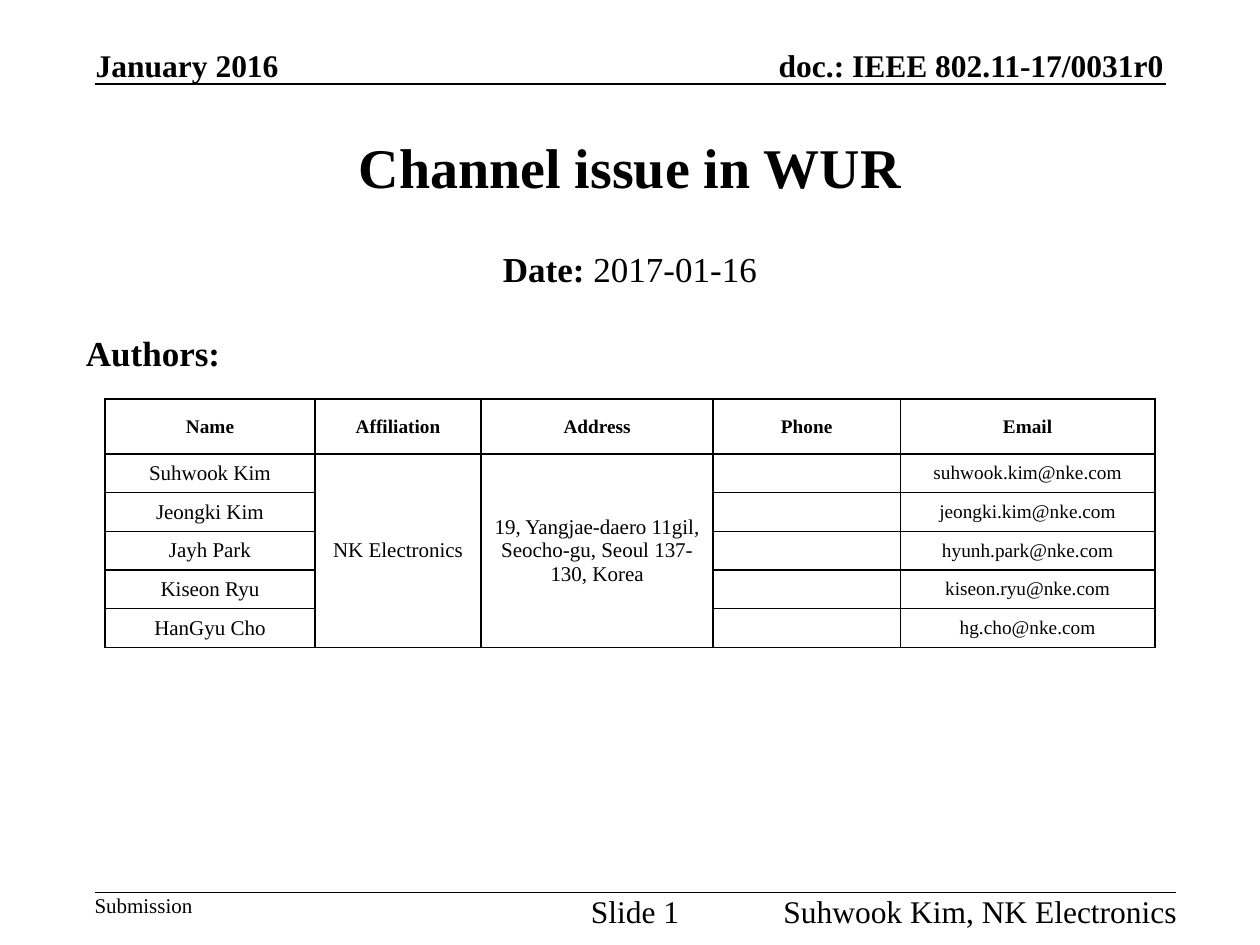
from dataclasses import dataclass

from lxml import etree
from pptx import Presentation
from pptx.dml.color import RGBColor
from pptx.enum import shapes, text
from pptx.oxml import ns
from pptx.util import Pt


@dataclass(frozen=True)
class Theme:
    font: str = "Times New Roman"
    ink: RGBColor = RGBColor(0, 0, 0)
    paper: RGBColor = RGBColor(255, 255, 255)
    title: int = 32
    subtitle: int = 20
    running: int = 18
    body: int = 12
    small: int = 11
    line: int = 1


THEME = Theme()
LEFT, CENTER, RIGHT = text.PP_ALIGN.LEFT, text.PP_ALIGN.CENTER, text.PP_ALIGN.RIGHT
TOP, MIDDLE, BOTTOM = (text.MSO_ANCHOR.TOP, text.MSO_ANCHOR.MIDDLE,
                       text.MSO_ANCHOR.BOTTOM)

# Header and footer: text, frame (left, top, width, height), size, bold, align, anchor
RUNNING_TEXTS = [
    ("January 2016", (54.7, 26.4, 106, 21.6), THEME.running, True, LEFT, BOTTOM),
    ("doc.: IEEE 802.11-17/0031r0", (406.6, 26.4, 258.4, 21.6), THEME.running, True, RIGHT, BOTTOM),
    ("Submission", (54, 510, 56, 14.4), THEME.body, False, LEFT, TOP),
    ("Slide 1", (332.9, 510, 60, 21.6), THEME.running, False, CENTER, TOP),
    ("Suhwook Kim, NK Electronics", (432.6, 510, 240, 21.6), THEME.running, False, RIGHT, TOP),
]
RULES = [(54, 666, 48), (54, 672, 510)]  # left, right, y

# Main texts: runs (text, bold), frame, size, align, anchor, space before
MAIN_TEXTS = [
    ([("Channel issue in WUR", True)], (54, 58, 612, 73.5), THEME.title, CENTER, MIDDLE, 0),
    ([("Date:", True), (" 2017-01-16", False)], (54, 138, 612, 30), THEME.subtitle, CENTER, TOP, 2),
    ([("Authors:", True)], (42, 186, 114, 30), THEME.subtitle, LEFT, TOP, 2),
]

HEADINGS = ["Name", "Affiliation", "Address", "Phone", "Email"]
AFFILIATION = "NK Electronics"
ADDRESS = "19, Yangjae-daero 11gil, Seocho-gu, Seoul 137-130, Korea"
AUTHORS = [
    ("Suhwook Kim", "suhwook.kim@nke.com"),
    ("Jeongki Kim", "jeongki.kim@nke.com"),
    ("Jayh Park", "hyunh.park@nke.com"),
    ("Kiseon Ryu", "kiseon.ryu@nke.com"),
    ("HanGyu Cho", "hg.cho@nke.com"),
]
TABLE_LEFT, TABLE_TOP = 60, 228
COLUMN_WIDTHS = [120, 95, 132.5, 107, 145.5]
HEADING_HEIGHT, AUTHOR_HEIGHT = 31.5, 22.1


def style_font(font, size, bold):
    font.name, font.size, font.bold = THEME.font, Pt(size), bold
    font.color.rgb = THEME.ink


def add_text(slide, runs, frame, size, align, anchor, margins=(0, 0), wrap=False, before=0):
    """Add a one-paragraph text box; margins are (horizontal, vertical)."""
    text_frame = slide.shapes.add_textbox(*map(Pt, frame)).text_frame
    text_frame.word_wrap = wrap
    text_frame.vertical_anchor = anchor
    text_frame.margin_left = text_frame.margin_right = Pt(margins[0])
    text_frame.margin_top = text_frame.margin_bottom = Pt(margins[1])
    paragraph = text_frame.paragraphs[0]
    paragraph.alignment = align
    paragraph.space_before = Pt(before)
    for words, bold in runs:
        run = paragraph.add_run()
        run.text = words
        style_font(run.font, size, bold)


def add_rule(slide, left, right, y):
    rule = slide.shapes.add_connector(
        shapes.MSO_CONNECTOR.STRAIGHT, Pt(left), Pt(y), Pt(right), Pt(y))
    rule.line.color.rgb = THEME.ink
    rule.line.width = Pt(THEME.line)
    etree.SubElement(rule._element.spPr, ns.qn("a:effectLst"))


def border_cell(cell):
    properties = cell._tc.get_or_add_tcPr()
    for position, side in enumerate(("lnL", "lnR", "lnT", "lnB")):
        line = etree.Element(ns.qn(f"a:{side}"), w=str(Pt(THEME.line)))
        fill = etree.SubElement(line, ns.qn("a:solidFill"))
        etree.SubElement(fill, ns.qn("a:srgbClr"), val=str(THEME.ink))
        properties.insert(position, line)


def fill_cell(cell, words, size, bold):
    cell.fill.solid()
    cell.fill.fore_color.rgb = THEME.paper
    border_cell(cell)
    cell.vertical_anchor = MIDDLE
    if not bold:
        cell.margin_left = cell.margin_right = Pt(5)
        cell.margin_top = cell.margin_bottom = 0
    paragraph = cell.text_frame.paragraphs[0]
    paragraph.text = words
    paragraph.alignment = CENTER
    style_font(paragraph.font, size, bold)


def add_author_table(slide):
    rows = [HEADINGS]
    for index, (name, email) in enumerate(AUTHORS):
        shared = ("", "") if index else (AFFILIATION, ADDRESS)
        rows.append([name, *shared, "", email])
    heights = [HEADING_HEIGHT] + [AUTHOR_HEIGHT] * len(AUTHORS)
    table = slide.shapes.add_table(
        len(rows), len(HEADINGS), Pt(TABLE_LEFT), Pt(TABLE_TOP),
        Pt(sum(COLUMN_WIDTHS)), Pt(sum(heights))).table
    table.first_row = table.horz_banding = False
    for column, width in zip(table.columns, COLUMN_WIDTHS):
        column.width = Pt(width)
    email_column = HEADINGS.index("Email")
    for row_index, (row, height) in enumerate(zip(rows, heights)):
        table.rows[row_index].height = Pt(height)
        heading = row_index == 0
        for column_index, words in enumerate(row):
            size = THEME.small if heading or column_index == email_column else THEME.body
            fill_cell(table.cell(row_index, column_index), words, size, heading)
    for heading in ("Affiliation", "Address"):
        column_index = HEADINGS.index(heading)
        table.cell(1, column_index).merge(table.cell(len(AUTHORS), column_index))


def main():
    presentation = Presentation()
    presentation.slide_width, presentation.slide_height = Pt(720), Pt(540)
    slide = presentation.slides.add_slide(presentation.slide_layouts[6])
    for rule in RULES:
        add_rule(slide, *rule)
    for words, frame, size, bold, align, anchor in RUNNING_TEXTS:
        add_text(slide, [(words, bold)], frame, size, align, anchor)
    for runs, frame, size, align, anchor, before in MAIN_TEXTS:
        add_text(slide, runs, frame, size, align, anchor, (7.2, 3.6), True, before)
    add_author_table(slide)
    presentation.save("out.pptx")


if __name__ == "__main__":
    main()
